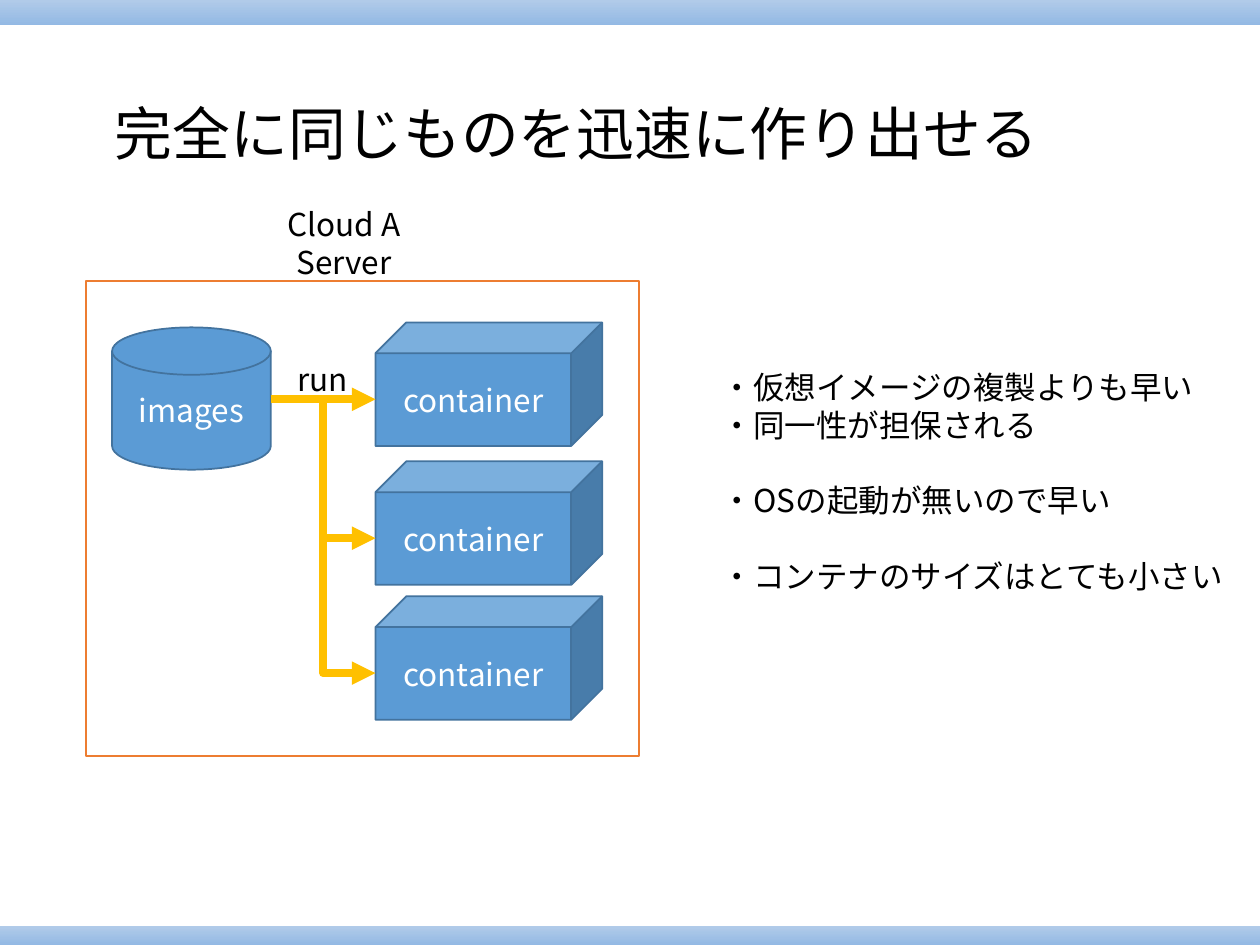
import pptx
import pptx.util
import pptx.dml.color
import pptx.oxml
import pptx.oxml.ns
from pptx.enum.dml import MSO_LINE
from pptx.enum.shapes import MSO_CONNECTOR, MSO_SHAPE
from pptx.enum.text import MSO_ANCHOR, MSO_AUTO_SIZE, PP_ALIGN

Cm = pptx.util.Cm
Pt = pptx.util.Pt


def color(value):
    return pptx.dml.color.RGBColor.from_string(value)


def add_element(parent, tag, **attributes):
    element = pptx.oxml.parse_xml(f'<a:{tag} {pptx.oxml.ns.nsdecls("a")}/>')
    for name, value in attributes.items():
        element.set(name, value)
    parent.append(element)
    return element


class SlideBuilder:
    font = "Noto Sans CJK JP"
    black = "000000"
    white = "FFFFFF"
    blue = "5B9BD5"
    blue_edge = "43739E"
    orange = "ED7D31"
    yellow = "FFC000"
    band_colors = ("B1CBE9", "93B9E4")

    def __init__(self, slide):
        self.slide = slide

    def set_text(self, shape, text, size=18, ink=black, align=PP_ALIGN.LEFT, anchor=MSO_ANCHOR.TOP, wrap=True):
        frame = shape.text_frame
        frame.text = text
        frame.word_wrap = wrap
        frame.auto_size = MSO_AUTO_SIZE.NONE
        frame.vertical_anchor = anchor
        for para in frame.paragraphs:
            para.alignment = align
            for span in para.runs:
                span.font.size = Pt(size)
                span.font.name = self.font
                span.font.color.rgb = color(ink)
                add_element(span.font._element, "ea", typeface=self.font)
        return frame.paragraphs

    def place(self, shape, left, top, width, height):
        shape.left, shape.top = Cm(left), Cm(top)
        shape.width, shape.height = Cm(width), Cm(height)

    def title(self, text, *area):
        holder = self.slide.shapes.title
        self.place(holder, *area)
        for para in self.set_text(holder, text, size=33, anchor=MSO_ANCHOR.MIDDLE):
            para.line_spacing = 0.9

    def points(self, groups, *area):
        holder = self.slide.placeholders[1]
        self.place(holder, *area)
        lines = [line for group in groups for line in group]
        openers = [group[0] for group in groups[1:]]
        for para in self.set_text(holder, "\n".join(lines)):
            para.space_before = Pt(21.6 if para.text in openers else 0)
            properties = para._p.get_or_add_pPr()
            properties.set("marL", "0")
            properties.set("indent", "0")
            add_element(properties, "buNone")

    def shape(self, kind, *area):
        box = self.slide.shapes.add_shape(kind, *map(Cm, area))
        box.shadow.inherit = False
        return box

    def band(self, *area):
        box = self.shape(MSO_SHAPE.RECTANGLE, *area)
        box.line.fill.background()
        box.fill.gradient()
        box.fill.gradient_angle = 270
        for stop, value in zip(box.fill.gradient_stops, self.band_colors):
            stop.color.rgb = color(value)

    def block(self, kind, area, text="", fill=blue, edge=blue_edge):
        box = self.shape(kind, *area)
        box.fill.solid()
        box.fill.fore_color.rgb = color(fill)
        box.line.color.rgb = color(edge)
        box.line.width = Pt(1)
        if text:
            self.set_text(box, text, ink=self.white, align=PP_ALIGN.CENTER, anchor=MSO_ANCHOR.MIDDLE)

    def label(self, text, *area, align=PP_ALIGN.LEFT):
        box = self.slide.shapes.add_textbox(*map(Cm, area))
        self.set_text(box, text, align=align, wrap=False)

    def arrow(self, *ends):
        connector = self.slide.shapes.add_connector(MSO_CONNECTOR.ELBOW, *map(Cm, ends))
        connector.line.color.rgb = color(self.yellow)
        connector.line.width = Pt(4.5)
        connector.line.dash_style = MSO_LINE.SOLID
        add_element(connector.line._get_or_add_ln(), "tailEnd", type="triangle")
        add_element(connector._element.spPr, "effectLst")


def main():
    deck = pptx.Presentation()
    deck.slide_width, deck.slide_height = Cm(25.4), Cm(19.05)
    page = SlideBuilder(deck.slides.add_slide(deck.slide_layouts[1]))

    page.band(0, 18.67, 25.4, 0.38)
    page.band(0, 0, 25.4, 0.51)
    page.title("完全に同じものを迅速に作り出せる", 2.06, 1.83, 21.9, 1.85)

    page.block(MSO_SHAPE.RECTANGLE, (1.73, 5.66, 11.15, 9.58), fill=page.white, edge=page.orange)
    page.block(MSO_SHAPE.FLOWCHART_MAGNETIC_DISK, (2.26, 6.6, 3.2, 2.87), "images")

    images_right, container_left = 5.46, 7.57
    container_tops = (6.5, 9.3, 12.02)
    arrow_drop = 1.55
    run_height = container_tops[0] + arrow_drop
    for top in container_tops:
        page.block(MSO_SHAPE.CUBE, (container_left, top, 4.57, 2.49), "container")
        page.arrow(images_right, run_height, container_left, top + arrow_drop)

    page.label("run", 5.74, 7.14, 1.57, 1.02)
    page.label("Cloud A\nServer", 5.46, 4.01, 2.95, 1.8, align=PP_ALIGN.CENTER)
    page.points(
        [
            ["・仮想イメージの複製よりも早い", "・同一性が担保される"],
            ["・OSの起動が無いので早い"],
            ["・コンテナのサイズはとても小さい"],
        ],
        14.3, 7.29, 10.77, 4.88,
    )
    deck.save("out.pptx")


if __name__ == "__main__":
    main()
